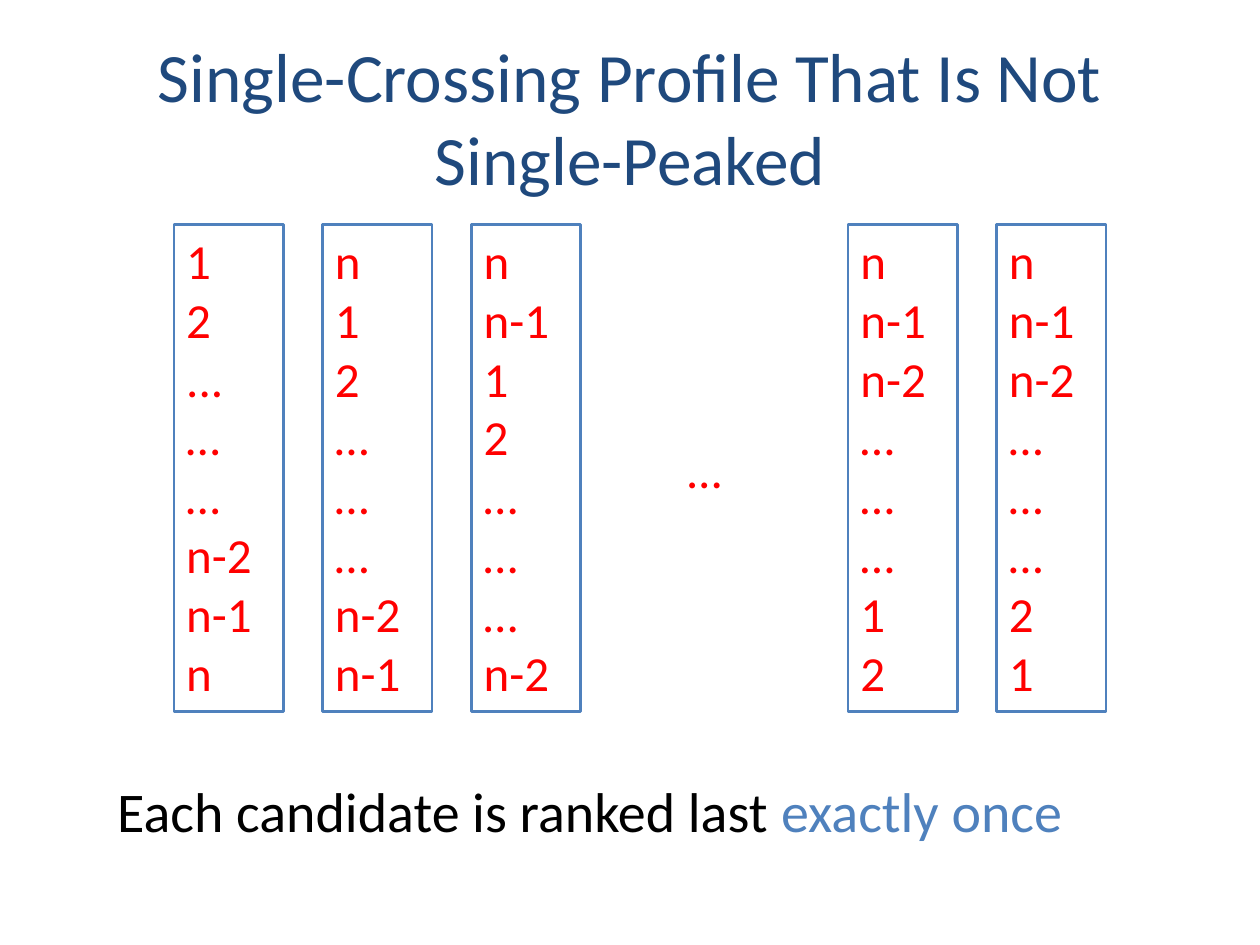
from lxml.etree import SubElement
from pptx import Presentation
from pptx.dml.color import RGBColor
from pptx.enum.shapes import MSO_SHAPE
from pptx.enum.text import MSO_ANCHOR, MSO_AUTO_SIZE, PP_ALIGN
from pptx.oxml.ns import qn
from pptx.util import Inches, Pt

COLORS = {"title": "1F497D", "text": "000000", "accent": "4F81BD", "ranking": "FF0000"}
RANKINGS = [
    (1.38, ["1", "2", "...", "…", "…", "n-2", "n-1", "n"]),
    (2.56, ["n", "1", "2", "…", "…", "…", "n-2", "n-1"]),
    (3.74, ["n", "n-1", "1", "2", "…", "…", "…", "n-2"]),
    (6.73, ["n", "n-1", "n-2", "…", "…", "…", "1", "2"]),
    (7.91, ["n", "n-1", "n-2", "…", "…", "…", "2", "1"]),
]


def place(shape, left, top, width, height):
    shape.left, shape.top = Inches(left), Inches(top)
    shape.width, shape.height = Inches(width), Inches(height)


def style(font, size, color):
    font.name = "Calibri"
    font.size = Pt(size)
    font.color.rgb = RGBColor.from_string(COLORS[color])


presentation = Presentation()
presentation.slide_width, presentation.slide_height = Inches(10), Inches(7.5)
slide = presentation.slides.add_slide(presentation.slide_layouts[1])

title = slide.shapes.title
place(title, 0.5, 0.3, 9, 1.25)
title.text_frame.text = "Single-Crossing Profile That Is Not Single-Peaked"
title.text_frame.auto_size = MSO_AUTO_SIZE.NONE
title.text_frame.vertical_anchor = MSO_ANCHOR.MIDDLE
paragraph = title.text_frame.paragraphs[0]
paragraph.alignment = PP_ALIGN.CENTER
style(paragraph.font, 39.6, "title")

body = slide.placeholders[1]
place(body, 0.83, 6.11, 9, 0.87)
body.text_frame.auto_size = MSO_AUTO_SIZE.NONE
paragraph = body.text_frame.paragraphs[0]
SubElement(paragraph._p.get_or_add_pPr(), qn("a:buNone"))
for text, color in [("Each candidate is ranked last ", "text"), ("exactly once", "accent")]:
    run = paragraph.add_run()
    run.text = text
    style(run.font, 32, color)

for left, candidates in RANKINGS:
    box = slide.shapes.add_shape(
        MSO_SHAPE.RECTANGLE, Inches(left), Inches(1.78), Inches(0.87), Inches(3.87))
    box.shadow.inherit = False
    box.fill.background()
    box.line.color.rgb = RGBColor.from_string(COLORS["accent"])
    box.line.width = Pt(1.5)
    frame = box.text_frame
    frame.word_wrap = True
    frame.vertical_anchor = MSO_ANCHOR.TOP
    paragraph = frame.paragraphs[0]
    paragraph.text = "\v".join(candidates)
    paragraph.alignment = PP_ALIGN.LEFT
    style(paragraph.font, 28, "ranking")

ellipsis = slide.shapes.add_textbox(Inches(5.36), Inches(3.44), Inches(0.5), Inches(0.57))
ellipsis.text_frame.word_wrap = True
ellipsis.text_frame.text = "…"
style(ellipsis.text_frame.paragraphs[0].font, 28, "ranking")

presentation.save("out.pptx")
